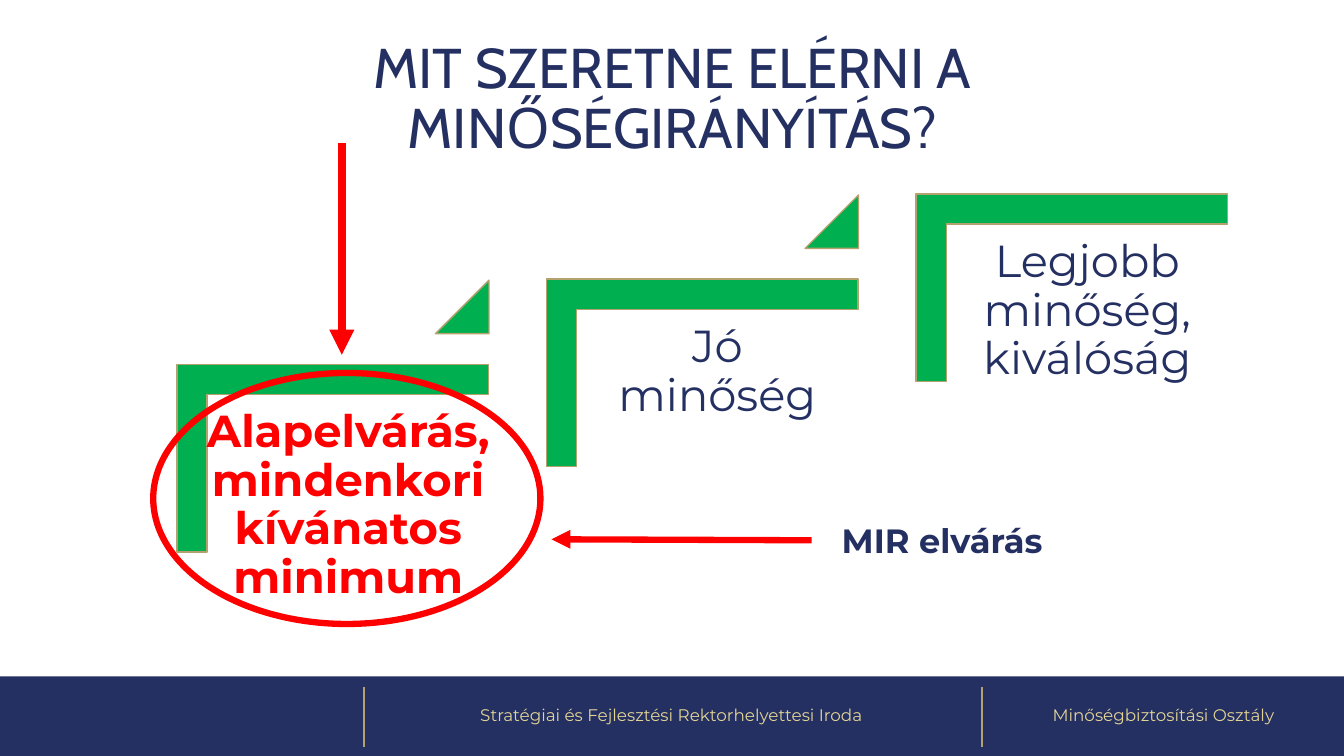
from pptx import Presentation
from pptx.dml.color import RGBColor
from pptx.enum.shapes import MSO_CONNECTOR, MSO_SHAPE
from pptx.enum.text import MSO_ANCHOR, PP_ALIGN
from pptx.oxml.ns import qn
from pptx.util import Inches, Pt
from lxml import etree

STRAIGHT = MSO_CONNECTOR.STRAIGHT
RECT, ELLIPSE = MSO_SHAPE.RECTANGLE, MSO_SHAPE.OVAL
CORNER, TRIANGLE = MSO_SHAPE.CORNER, MSO_SHAPE.ISOSCELES_TRIANGLE
TOP, MIDDLE = MSO_ANCHOR.TOP, MSO_ANCHOR.MIDDLE
LEFT, CENTER = PP_ALIGN.LEFT, PP_ALIGN.CENTER

COLORS = {
    "navy": "242F62",
    "gold": "B3A16E",
    "sand": "E3D496",
    "green": "00B050",
    "red": "FF0000",
}


class SlideBuilder:
    def __init__(self, slide, font="Montserrat"):
        self.slide = slide
        self.font = font

    def color(self, name):
        return RGBColor.from_string(COLORS[name])

    def shape(self, kind, left, top, width, height, fill=None, line=None,
              line_width=1, adjustments=(), rotation=0):
        sp = self.slide.shapes.add_shape(
            kind, Inches(left), Inches(top), Inches(width), Inches(height))
        sp.shadow.inherit = False
        sp.rotation = rotation
        for i, value in enumerate(adjustments):
            sp.adjustments[i] = value
        if fill:
            sp.fill.solid()
            sp.fill.fore_color.rgb = self.color(fill)
        else:
            sp.fill.background()
        if line:
            sp.line.color.rgb = self.color(line)
            sp.line.width = Pt(line_width)
        else:
            sp.line.fill.background()
        return sp

    def line(self, x1, y1, x2, y2, color, width, arrow=False):
        cx = self.slide.shapes.add_connector(
            STRAIGHT, Inches(x1), Inches(y1), Inches(x2), Inches(y2))
        cx.line.color.rgb = self.color(color)
        cx.line.width = Pt(width)
        if arrow:
            ln = cx.line._get_or_add_ln()
            etree.SubElement(ln, qn("a:tailEnd"), type="triangle")
        etree.SubElement(cx._element.spPr, qn("a:effectLst"))
        return cx

    def text(self, text, left, top, width, height, size, color="navy",
             bold=False, font=None, align=CENTER, anchor=TOP, spacing=0.9,
             inset=None):
        sp = self.slide.shapes.add_textbox(
            Inches(left), Inches(top), Inches(width), Inches(height))
        tf = sp.text_frame
        tf.word_wrap = True
        tf.vertical_anchor = anchor
        if inset is not None:
            tf.margin_left = tf.margin_right = Inches(inset)
            tf.margin_top = tf.margin_bottom = Inches(inset)
        tf.text = text
        p = tf.paragraphs[0]
        p.alignment = align
        p.line_spacing = spacing
        r = p.runs[0]
        r.font.name = font or self.font
        r.font.size = Pt(size)
        r.font.bold = bold
        r.font.color.rgb = self.color(color)
        return sp


def add_footer(s):
    top, height = 6.71, 0.79
    s.shape(RECT, 0, top, 13.33, height, fill="navy")
    for x in (3.61, 9.74):
        s.line(x, 6.82, x, 7.41, "gold", 1.5)
    for label, left, width in (
            ("Stratégiai és Fejlesztési Rektorhelyettesi Iroda", 3.59, 6.14),
            ("Minőségbiztosítási Osztály", 9.74, 3.6)):
        s.text(label, left, top, width, height, 12, "sand", anchor=MIDDLE)


def add_staircase(s):
    run, rise = 3.665, 0.845
    steps = (
        ("Alapelvárás, mindenkori kívánatos minimum", 1.81, 3.29, "red", True),
        ("Jó minőség", 5.72, 2.79, "navy", False),
        ("Legjobb minőség, kiválóság", 9.39, 2.79, "navy", False),
    )
    for i, (label, left, width, color, bold) in enumerate(steps):
        dx, dy = i * run, i * rise
        s.shape(CORNER, 2.37 + dx, 3 - dy, 1.86, 3.09, "green", "gold",
                adjustments=(0.161, 0.161), rotation=90)
        s.text(label, left, 3.93 - dy, width, 2.44, 32, color, bold, inset=0.13)
        if i < len(steps) - 1:
            s.shape(TRIANGLE, 4.32 + dx, 2.78 - dy, 0.53, 0.53, "green", "gold",
                    adjustments=(1,))


def add_expectation(s):
    """Red marks that single out the lowest step."""
    s.line(3.39, 1.42, 3.39, 3.52, "red", 6, arrow=True)
    s.shape(ELLIPSE, 1.52, 3.7, 3.84, 2.49, line="red", line_width=4.5)
    s.line(8.05, 5.36, 5.47, 5.35, "red", 4.5, arrow=True)
    s.text("MIR elvárás", 8.25, 5.11, 3.29, 0.5, 24, bold=True, align=LEFT,
           spacing=1)


def main():
    prs = Presentation()
    prs.slide_width, prs.slide_height = Inches(13.33), Inches(7.5)
    s = SlideBuilder(prs.slides.add_slide(prs.slide_layouts[6]))
    add_footer(s)
    s.text("MIT SZERETNE ELÉRNI A MINŐSÉGIRÁNYÍTÁS?", 0.92, 0.4, 11.5, 1.19,
           40, font="Cabin", anchor=MIDDLE)
    add_staircase(s)
    add_expectation(s)
    prs.save("out.pptx")


if __name__ == "__main__":
    main()
